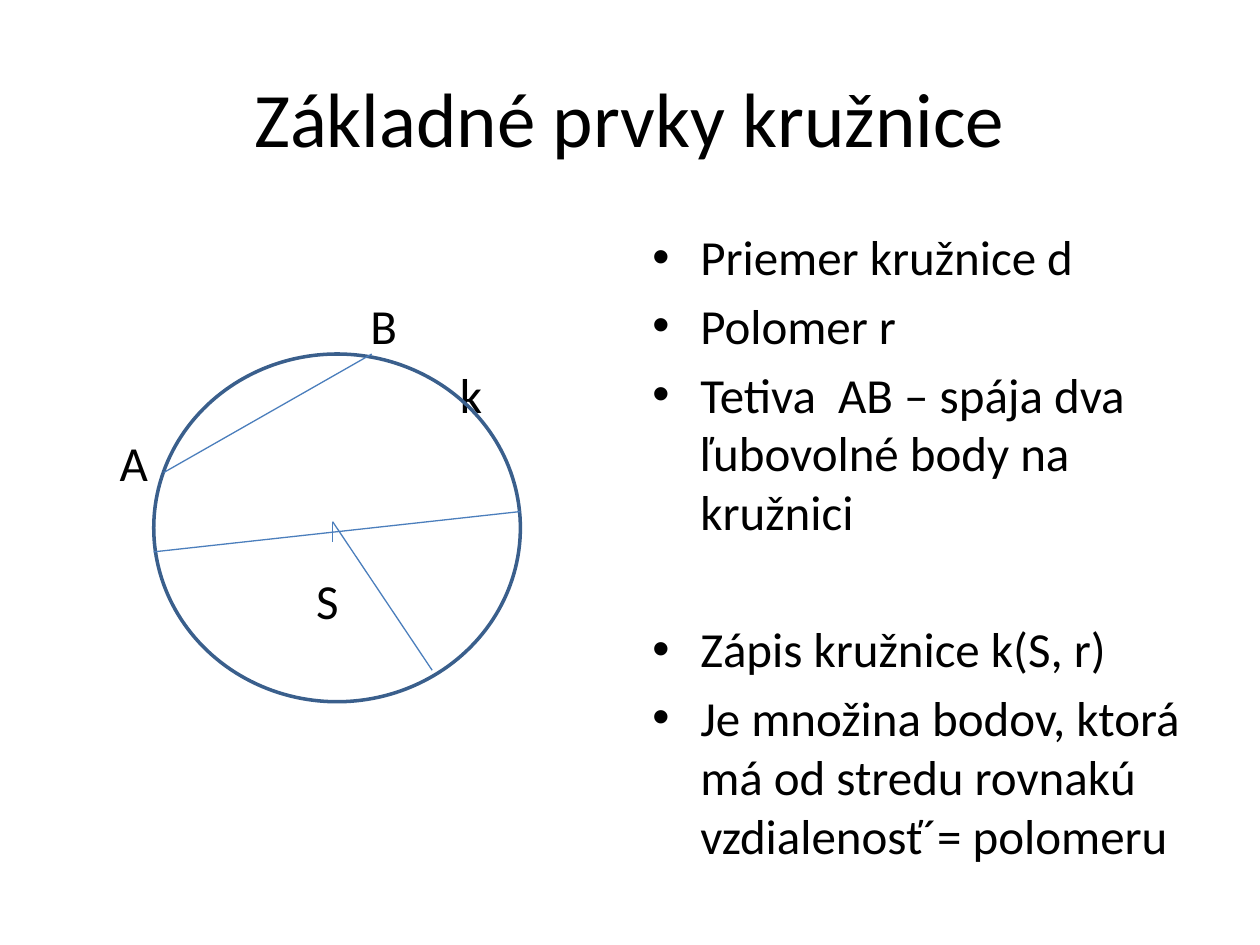
from typing import NamedTuple

from lxml import etree
from pptx import Presentation
from pptx import util as u
from pptx.dml.color import RGBColor
from pptx.enum import shapes, text
from pptx.oxml import ns

FONT = "Calibri"
BLACK, OUTLINE, THIN_LINE = "000000", "3A5F8C", "4B7EBC"
BODY_SIZE = 28
PARAGRAPH_GAP = 5.6
SECTION_GAP = 44.8
FIRST_ROW, ROW_PITCH = 1.8, 0.545
HANGING_INDENT = 0.38


class PointLabel(NamedTuple):
    letter: str
    left: float
    row: int


class Segment(NamedTuple):
    start: tuple[float, float]
    end: tuple[float, float]


class Bullet(NamedTuple):
    wording: str
    space_before: float = PARAGRAPH_GAP


CENTER = (2.64, 4.14)

LABELS = [
    PointLabel("B", 2.94, 1),
    PointLabel("k", 3.65, 2),
    PointLabel("A", 0.95, 3),
    PointLabel("S", 2.51, 5),
]

SEGMENTS = [
    Segment((1.22, 4.38), (4.13, 4.06)),  # diameter
    Segment(CENTER, (2.64, 4.3)),  # centre mark
    Segment(CENTER, (3.43, 5.32)),  # radius
    Segment((1.3, 3.75), (2.95, 2.81)),  # chord AB
]

BULLETS = [
    Bullet("Priemer kružnice d", 0),
    Bullet("Polomer r"),
    Bullet("Tetiva  AB – spája dva ľubovolné body na kružnici"),
    Bullet("Zápis kružnice k(S, r)", SECTION_GAP),
    Bullet("Je množina bodov, ktorá má od stredu rovnakú vzdialenosť´= polomeru"),
]


def color(value: str) -> RGBColor:
    return RGBColor.from_string(value)


def add_frame(slide, left: float, top: float, width: float, height: float):
    box = slide.shapes.add_textbox(*map(u.Inches, (left, top, width, height)))
    box.text_frame.word_wrap = True
    return box.text_frame


def write(paragraph, wording: str, size: float = BODY_SIZE) -> None:
    paragraph.text = wording
    paragraph.font.name = FONT
    paragraph.font.size = u.Pt(size)
    paragraph.font.color.rgb = color(BLACK)


def add_title(slide, wording: str) -> None:
    frame = add_frame(slide, 0.5, 0.3, 9, 1.25)
    frame.vertical_anchor = text.MSO_ANCHOR.MIDDLE
    write(frame.paragraphs[0], wording, 44)
    frame.paragraphs[0].alignment = text.PP_ALIGN.CENTER


def add_label(slide, label: PointLabel) -> None:
    top = FIRST_ROW + label.row * ROW_PITCH
    frame = add_frame(slide, label.left, top, 0.4, 0.48)
    frame.margin_left = frame.margin_right = 0
    frame.margin_top = frame.margin_bottom = 0
    write(frame.paragraphs[0], label.letter)


def add_bullets(slide, bullets: list[Bullet]) -> None:
    frame = add_frame(slide, 5.08, 1.75, 4.42, 4.95)
    for index, bullet in enumerate(bullets):
        paragraph = frame.add_paragraph() if index else frame.paragraphs[0]
        write(paragraph, bullet.wording)
        paragraph.space_before = u.Pt(bullet.space_before)
        properties = paragraph._p.get_or_add_pPr()
        properties.set("marL", str(u.Inches(HANGING_INDENT)))
        properties.set("indent", str(-u.Inches(HANGING_INDENT)))
        # The bullet must stand ahead of the default run properties
        font = etree.Element(ns.qn("a:buFont"), typeface="Arial")
        character = etree.Element(ns.qn("a:buChar"), char="•")
        defaults = properties.find(ns.qn("a:defRPr"))
        defaults.addprevious(font)
        defaults.addprevious(character)


def add_circle(slide) -> None:
    circle = slide.shapes.add_shape(
        shapes.MSO_SHAPE.OVAL, *map(u.Inches, (1.22, 2.81, 2.91, 2.76))
    )
    circle.shadow.inherit = False
    circle.fill.background()
    circle.line.color.rgb = color(OUTLINE)
    circle.line.width = u.Pt(2)


def add_segment(slide, segment: Segment) -> None:
    connector = slide.shapes.add_connector(
        shapes.MSO_CONNECTOR.STRAIGHT, *map(u.Inches, segment.start + segment.end)
    )
    connector.line.color.rgb = color(THIN_LINE)
    connector.line.width = u.Pt(0.75)
    etree.SubElement(connector._element.spPr, ns.qn("a:effectLst"))


def main() -> None:
    presentation = Presentation()
    presentation.slide_width = u.Inches(10)
    presentation.slide_height = u.Inches(7.5)
    slide = presentation.slides.add_slide(presentation.slide_layouts[6])

    # Wording
    add_title(slide, "Základné prvky kružnice")
    for label in LABELS:
        add_label(slide, label)
    add_bullets(slide, BULLETS)

    # Circle with its diameter, radius and chord
    add_circle(slide)
    for segment in SEGMENTS:
        add_segment(slide, segment)

    presentation.save("out.pptx")


if __name__ == "__main__":
    main()
